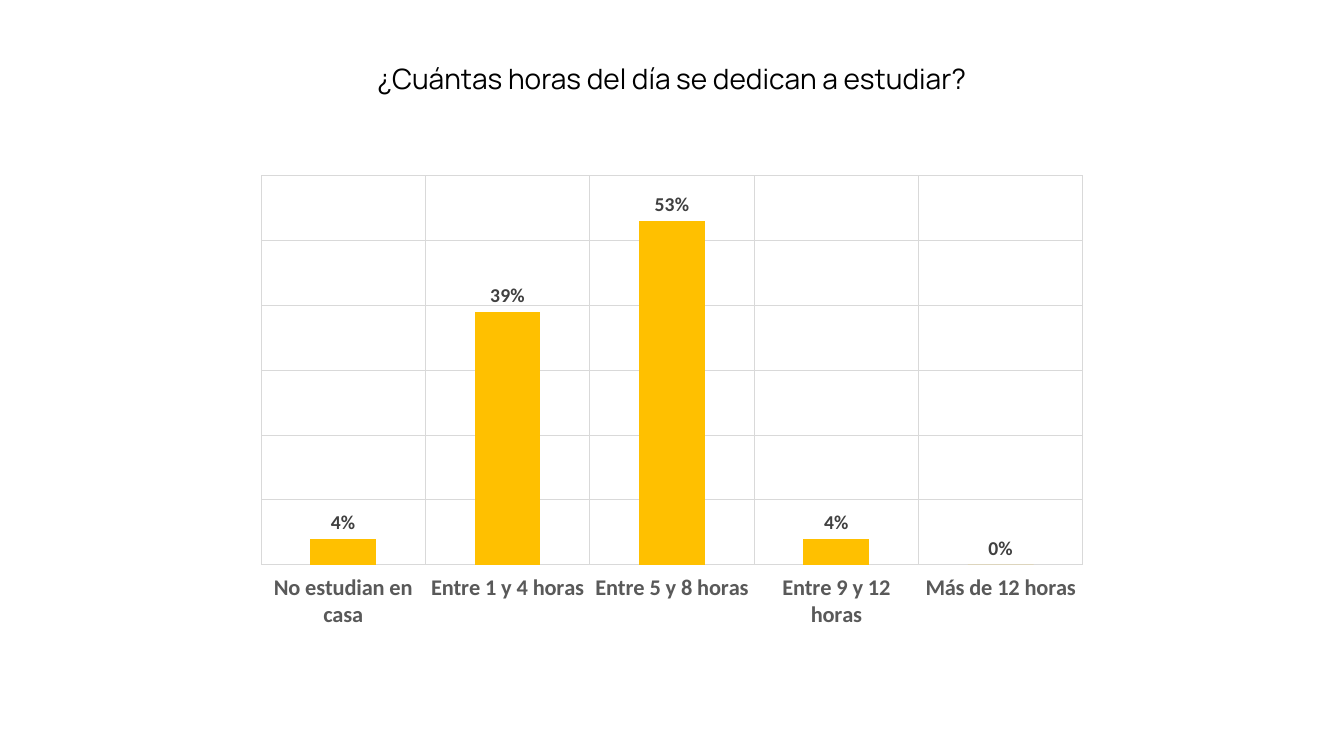
from dataclasses import dataclass

from pptx import Presentation
from pptx.chart.data import CategoryChartData
from pptx.dml.color import RGBColor
from pptx.enum.chart import XL_CHART_TYPE, XL_LABEL_POSITION, XL_TICK_LABEL_POSITION, XL_TICK_MARK
from pptx.enum.text import MSO_ANCHOR, PP_ALIGN
from pptx.util import Inches, Pt


@dataclass(frozen=True)
class Theme:
    title_font: str = "Manrope"
    chart_font: str = "Calibri"
    title_size: int = 20
    chart_size: int = 10
    category_size: int = 16
    label_size: int = 14
    line_width: float = 0.75
    ink: str = "000000"
    category_ink: str = "595959"
    label_ink: str = "404040"
    grid: str = "D9D9D9"
    bar: str = "FFC000"


HOURS_SHARES = {
    "No estudian en casa": 0.04,
    "Entre 1 y 4 horas": 0.39,
    "Entre 5 y 8 horas": 0.53,
    "Entre 9 y 12 horas": 0.04,
    "Más de 12 horas": 0,
}


class SlideBuilder:
    def __init__(self, deck, theme):
        self.deck = deck
        self.theme = theme
        self.page = deck.slides.add_slide(deck.slide_layouts[6])

    def centred(self, top, width, height):
        """Frame centred across the slide, from percentages of its size."""
        frame_width = int(self.deck.slide_width * width / 100)
        left = (self.deck.slide_width - frame_width) // 2
        top, height = (int(self.deck.slide_height * share / 100) for share in (top, height))
        return left, top, frame_width, height

    def style_font(self, font, name, size, color, bold=False):
        font.name = name
        font.size = Pt(size)
        font.bold = bold
        font.color.rgb = RGBColor.from_string(color)

    def style_line(self, line):
        line.color.rgb = RGBColor.from_string(self.theme.grid)
        line.width = Pt(self.theme.line_width)

    def title(self, text, frame):
        box = self.page.shapes.add_textbox(*frame)
        box.text_frame.word_wrap = True
        box.text_frame.vertical_anchor = MSO_ANCHOR.TOP
        box.text_frame.text = text
        para = box.text_frame.paragraphs[0]
        para.alignment = PP_ALIGN.CENTER
        self.style_font(para.runs[0].font, self.theme.title_font, self.theme.title_size, self.theme.ink)

    def column_chart(self, shares, frame):
        theme = self.theme
        data = CategoryChartData(number_format="0%")
        data.categories = list(shares)
        data.add_series("Series 1", list(shares.values()))
        chart = self.page.shapes.add_chart(XL_CHART_TYPE.COLUMN_CLUSTERED, *frame, data).chart
        chart.has_title = False
        chart.has_legend = False
        self.style_font(chart.font, theme.chart_font, theme.chart_size, theme.ink)

        categories, values = chart.category_axis, chart.value_axis
        for axis in (categories, values):
            axis.has_major_gridlines = True
            self.style_line(axis.major_gridlines.format.line)
            axis.major_tick_mark = XL_TICK_MARK.NONE
        self.style_line(categories.format.line)
        categories.tick_label_position = XL_TICK_LABEL_POSITION.LOW
        self.style_font(categories.tick_labels.font, theme.chart_font,
                        theme.category_size, theme.category_ink, bold=True)
        values.minimum_scale, values.maximum_scale, values.major_unit = 0, 0.6, 0.1
        values.visible = False

        plot = chart.plots[0]
        plot.gap_width, plot.overlap = 150, -27
        plot.vary_by_categories = False
        fill = plot.series[0].format.fill
        fill.solid()
        fill.fore_color.rgb = RGBColor.from_string(theme.bar)
        plot.has_data_labels = True
        labels = plot.data_labels
        labels.show_value = True
        labels.number_format, labels.number_format_is_linked = "0%", False
        labels.position = XL_LABEL_POSITION.OUTSIDE_END
        self.style_font(labels.font, theme.chart_font, theme.label_size, theme.label_ink, bold=True)


def main():
    deck = Presentation()
    deck.slide_width, deck.slide_height = Inches(13.33), Inches(7.5)
    builder = SlideBuilder(deck, Theme())
    builder.title("¿Cuántas horas del día se dedican a estudiar?",
                  builder.centred(top=7.5, width=69.25, height=9.5))
    builder.column_chart(HOURS_SHARES, builder.centred(top=22, width=63.7, height=62.5))
    deck.save("out.pptx")


if __name__ == "__main__":
    main()
